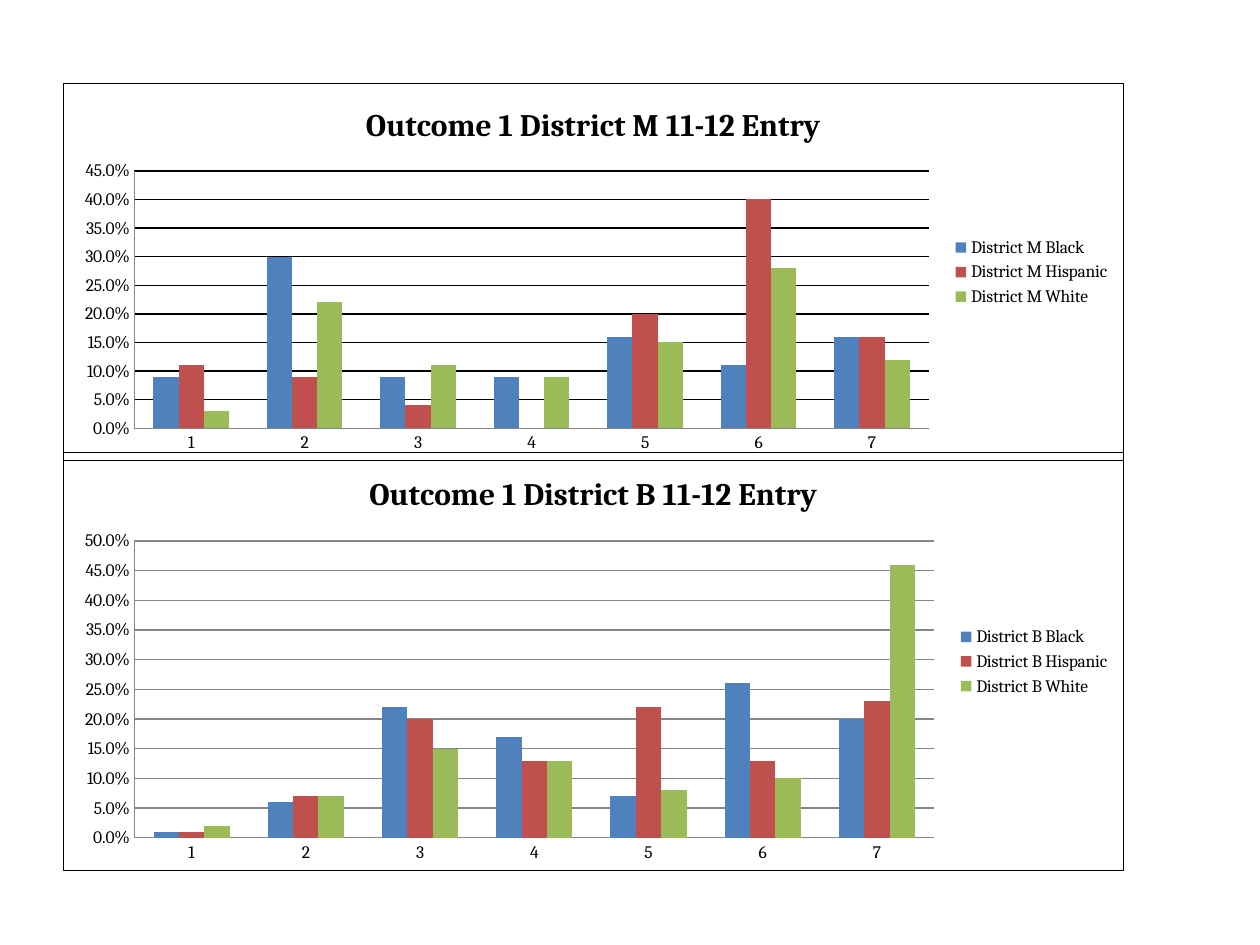
"""Build a slide with two clustered column charts of entry outcomes by district."""
from pptx import Presentation
from pptx.chart.data import CategoryChartData
from pptx.dml.color import RGBColor
from pptx.enum.chart import XL_CHART_TYPE as ChartType
from pptx.enum.chart import XL_LEGEND_POSITION as LegendPosition
from pptx.enum.chart import XL_TICK_MARK as TickMark
from pptx.oxml import parse_xml
from pptx.oxml.ns import nsdecls, qn
from pptx.util import Pt

COLORS = {"text": "000000", "border": "000000", "axis": "868686",
          "Black": "4F81BD", "Hispanic": "C0504D", "White": "9BBB59"}
CHARTS = [
    {"district": "M", "top": 47.5, "height": 216, "maximum": 0.45, "grid": "000000",
     "values": {"Black": (0.09, 0.3, 0.09, 0.09, 0.16, 0.11, 0.16),
                "Hispanic": (0.11, 0.09, 0.04, 0, 0.2, 0.4, 0.16),
                "White": (0.03, 0.22, 0.11, 0.09, 0.15, 0.28, 0.12)}},
    {"district": "B", "top": 258, "height": 240, "maximum": 0.5, "grid": "868686",
     "values": {"Black": (0.01, 0.06, 0.22, 0.17, 0.07, 0.26, 0.2),
                "Hispanic": (0.01, 0.07, 0.2, 0.13, 0.22, 0.13, 0.23),
                "White": (0.02, 0.07, 0.15, 0.13, 0.08, 0.1, 0.46)}},
]


def style_font(font, size, bold=False):
    formats = {"name": "Cambria", "size": Pt(size), "bold": bold}
    for name, value in formats.items():
        setattr(font, name, value)
    font.color.rgb = RGBColor.from_string(COLORS["text"])


def style_line(line, color):
    line.color.rgb = RGBColor.from_string(color)
    line.width = Pt(0.75)


presentation = Presentation()
presentation.slide_width, presentation.slide_height = Pt(720), Pt(540)
slide = presentation.slides.add_slide(presentation.slide_layouts[6])

for entry in CHARTS:
    data = CategoryChartData(number_format="0.0%")
    data.categories = [str(number) for number in range(1, 8)]
    for group, values in entry["values"].items():
        data.add_series(f"District {entry['district']} {group}", values)
    chart = slide.shapes.add_chart(
        ChartType.COLUMN_CLUSTERED, Pt(36), Pt(entry["top"]),
        Pt(606.25), Pt(entry["height"]), data).chart
    style_font(chart.font, 10)

    chart.has_title = True
    title = chart.chart_title
    title.include_in_layout = False
    paragraph = title.text_frame.paragraphs[0]
    run = paragraph.add_run()
    run.text = f"Outcome 1 District {entry['district']} 11-12 Entry"
    style_font(run.font, 18, True)

    chart.has_legend = True
    chart.legend.position = LegendPosition.RIGHT
    chart.legend.include_in_layout = False

    plot = chart.plots[0]
    plot.gap_width, plot.overlap = 150, 0
    plot.vary_by_categories = False
    for series, group in zip(plot.series, entry["values"]):
        series.format.fill.solid()
        series.format.fill.fore_color.rgb = RGBColor.from_string(COLORS[group])

    for axis in (chart.category_axis, chart.value_axis):
        axis.major_tick_mark = axis.minor_tick_mark = TickMark.NONE
        style_line(axis.format.line, COLORS["axis"])
    axis_formats = {"minimum_scale": 0, "maximum_scale": entry["maximum"],
                    "major_unit": 0.05, "has_major_gridlines": True}
    for name, value in axis_formats.items():
        setattr(chart.value_axis, name, value)
    chart.value_axis.tick_labels.number_format = "0.0%"
    chart.value_axis.tick_labels.number_format_is_linked = False
    style_line(chart.value_axis.major_gridlines.format.line, entry["grid"])

    chart.element.find(qn("c:chart")).addnext(parse_xml(
        f'<c:spPr {nsdecls("c", "a")}><a:noFill/><a:ln w="{Pt(0.75)}"><a:solidFill>'
        f'<a:srgbClr val="{COLORS["border"]}"/></a:solidFill></a:ln></c:spPr>'))

presentation.save("out.pptx")
